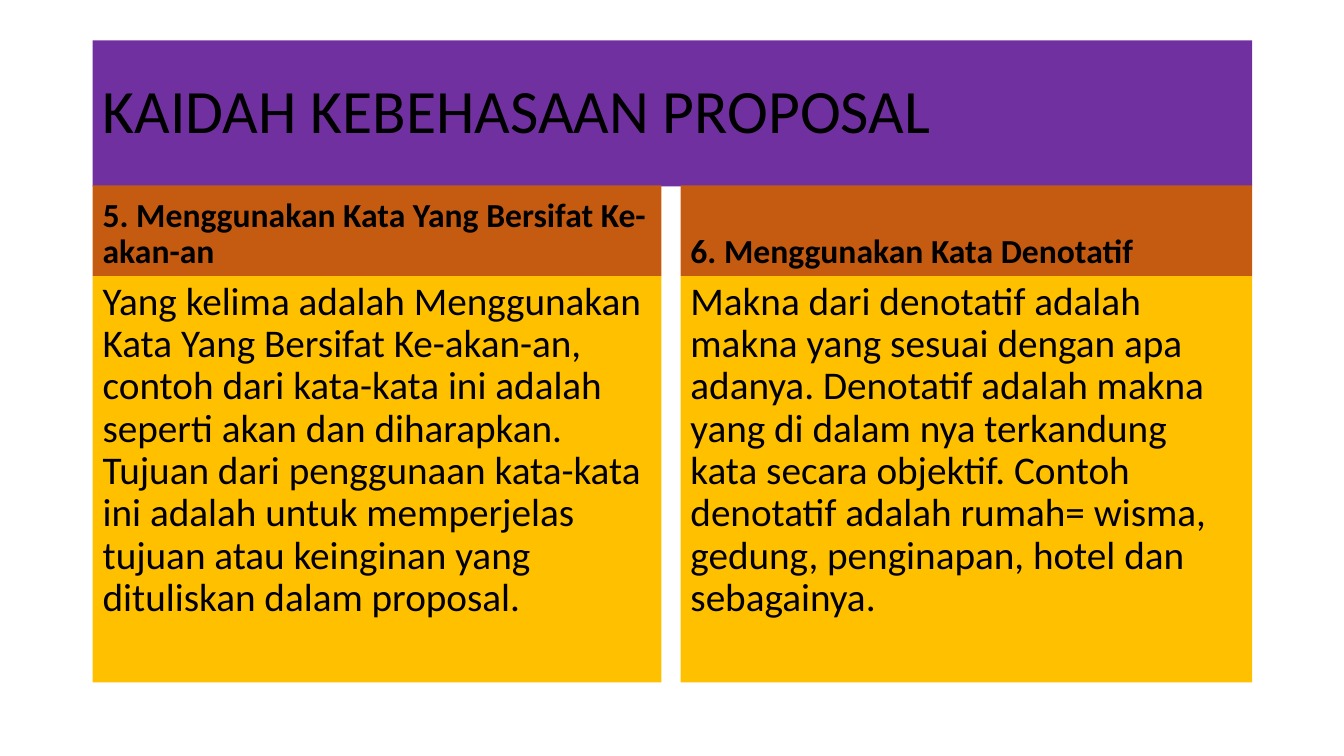
from dataclasses import dataclass

from pptx import Presentation
from pptx.dml.color import RGBColor
from pptx.enum.shapes import MSO_SHAPE
from pptx.enum.text import MSO_ANCHOR, PP_ALIGN
from pptx.util import Inches, Pt

LEFT, RIGHT = 0.92, 12.42
COLUMNS = ((LEFT, 5.64), (6.75, 5.67))
TITLE_ROW, HEADING_ROW, BODY_ROW = (0.4, 1.45), (1.84, 0.9), (2.74, 4.03)


@dataclass(frozen=True)
class Style:
    fill: str
    anchor: MSO_ANCHOR
    size: int
    bold: bool = False


TITLE = Style("7030A0", MSO_ANCHOR.MIDDLE, 44)
HEADING = Style("C55A11", MSO_ANCHOR.BOTTOM, 24, True)
BODY = Style("FFC000", MSO_ANCHOR.TOP, 28)

RULES = (
    (
        "5. Menggunakan Kata Yang Bersifat Ke-akan-an",
        "Yang kelima adalah Menggunakan Kata Yang Bersifat Ke-akan-an, "
        "contoh dari kata-kata ini adalah seperti akan dan diharapkan. "
        "Tujuan dari penggunaan kata-kata ini adalah untuk memperjelas "
        "tujuan atau keinginan yang dituliskan dalam proposal.",
    ),
    (
        "6. Menggunakan Kata Denotatif",
        "Makna dari denotatif adalah makna yang sesuai dengan apa adanya. "
        "Denotatif adalah makna yang di dalam nya terkandung kata secara "
        "objektif. Contoh denotatif adalah rumah= wisma, gedung, "
        "penginapan, hotel dan sebagainya.",
    ),
)


def color(value: str) -> RGBColor:
    return RGBColor.from_string(value)


def add_panel(s, column: tuple, row: tuple, text: str, style: Style) -> None:
    (x, w), (y, h) = column, row
    sp = s.shapes.add_shape(MSO_SHAPE.RECTANGLE, *map(Inches, (x, y, w, h)))
    sp.shadow.inherit = False
    sp.fill.solid()
    sp.fill.fore_color.rgb = color(style.fill)
    sp.line.fill.background()
    tf = sp.text_frame
    tf.word_wrap = True
    tf.vertical_anchor = style.anchor
    p = tf.paragraphs[0]
    p.alignment = PP_ALIGN.LEFT
    p.line_spacing = 0.9
    r = p.add_run()
    r.text = text
    font = {"name": "Calibri", "size": Pt(style.size), "bold": style.bold}
    for name, value in font.items():
        setattr(r.font, name, value)
    r.font.color.rgb = color("000000")


def main() -> None:
    prs = Presentation()
    prs.slide_width, prs.slide_height = Inches(13.33), Inches(7.5)
    s = prs.slides.add_slide(prs.slide_layouts[6])
    add_panel(s, (LEFT, RIGHT - LEFT), TITLE_ROW, "KAIDAH KEBEHASAAN PROPOSAL", TITLE)
    for column, (heading, body) in zip(COLUMNS, RULES):
        add_panel(s, column, HEADING_ROW, heading, HEADING)
        add_panel(s, column, BODY_ROW, body, BODY)
    prs.save("out.pptx")


if __name__ == "__main__":
    main()
